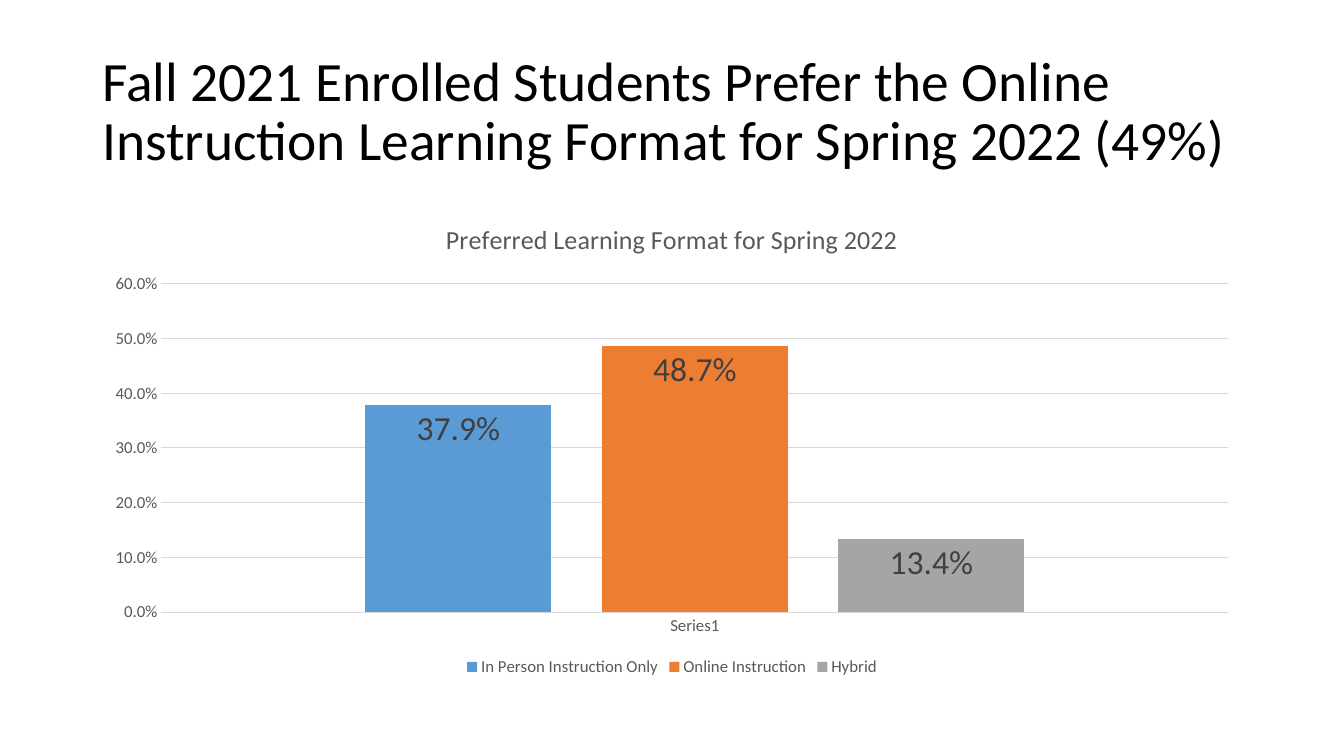
from dataclasses import dataclass

from pptx import Presentation
from pptx.chart.data import CategoryChartData
from pptx.dml.color import RGBColor
from pptx.enum.chart import XL_CHART_TYPE, XL_LABEL_POSITION, XL_LEGEND_POSITION, XL_TICK_MARK
from pptx.enum.text import MSO_ANCHOR
from pptx.util import Cm, Pt


@dataclass(frozen=True)
class Theme:
    font: str = "Calibri"
    heading: str = "000000"
    muted: str = "595959"
    label: str = "404040"
    grid: str = "D9D9D9"
    bars: tuple = ("5B9BD5", "ED7D31", "A5A5A5")
    heading_size: float = 39.6
    chart_title_size: float = 18.6
    label_size: float = 24
    axis_size: float = 12


theme = Theme()


def style_font(font, size, color):
    font.name = theme.font
    font.size = Pt(size)
    font.bold = False
    font.color.rgb = RGBColor.from_string(color)


def write_text(frame, text, size, color, line_spacing=None):
    para = frame.paragraphs[0]
    para.line_spacing = line_spacing
    span = para.add_run()
    span.text = text
    style_font(span.font, size, color)


deck = Presentation()
deck.slide_width = Cm(33.87)
deck.slide_height = Cm(19.05)
page = deck.slides.add_slide(deck.slide_layouts[6])

left, width = Cm(2.33), Cm(29.21)

box = page.shapes.add_textbox(left, Cm(1.01), width, Cm(3.68))
box.text_frame.word_wrap = True
box.text_frame.vertical_anchor = MSO_ANCHOR.MIDDLE
write_text(
    box.text_frame,
    "Fall 2021 Enrolled Students Prefer the Online Instruction Learning Format for Spring 2022 (49%)",
    size=theme.heading_size,
    color=theme.heading,
    line_spacing=0.9,
)

preferences = {"In Person Instruction Only": 0.379, "Online Instruction": 0.487, "Hybrid": 0.134}
data = CategoryChartData(number_format="0.0%")
data.categories = ["Series1"]
for learning_format, share in preferences.items():
    data.add_series(learning_format, [share])

chart = page.shapes.add_chart(
    XL_CHART_TYPE.COLUMN_CLUSTERED, left, Cm(5.07), width, Cm(12.09), data
).chart
style_font(chart.font, theme.axis_size, theme.muted)
chart.has_title = True
write_text(
    chart.chart_title.text_frame,
    "Preferred Learning Format for Spring 2022",
    size=theme.chart_title_size,
    color=theme.muted,
)
chart.chart_title.include_in_layout = False

chart.has_legend = True
chart.legend.position = XL_LEGEND_POSITION.BOTTOM
chart.legend.include_in_layout = False
style_font(chart.legend.font, theme.axis_size, theme.muted)

for axis in (chart.category_axis, chart.value_axis):
    axis.major_tick_mark = XL_TICK_MARK.NONE
    axis.minor_tick_mark = XL_TICK_MARK.NONE
    style_font(axis.tick_labels.font, theme.axis_size, theme.muted)

value_axis = chart.value_axis
value_axis.minimum_scale = 0
value_axis.maximum_scale = 0.6
value_axis.major_unit = 0.1
value_axis.tick_labels.number_format = "0.0%"
value_axis.tick_labels.number_format_is_linked = False
value_axis.format.line.fill.background()

for line in (chart.category_axis.format.line, value_axis.major_gridlines.format.line):
    line.width = Pt(0.75)
    line.color.rgb = RGBColor.from_string(theme.grid)

plot = chart.plots[0]
plot.vary_by_categories = False
plot.gap_width = 219
plot.overlap = -27
for series, color in zip(plot.series, theme.bars):
    series.format.fill.solid()
    series.format.fill.fore_color.rgb = RGBColor.from_string(color)
    labels = series.data_labels
    labels.show_value = True
    labels.position = XL_LABEL_POSITION.INSIDE_END
    labels.number_format = "0.0%"
    labels.number_format_is_linked = False
    style_font(labels.font, theme.label_size, theme.label)

deck.save("out.pptx")
